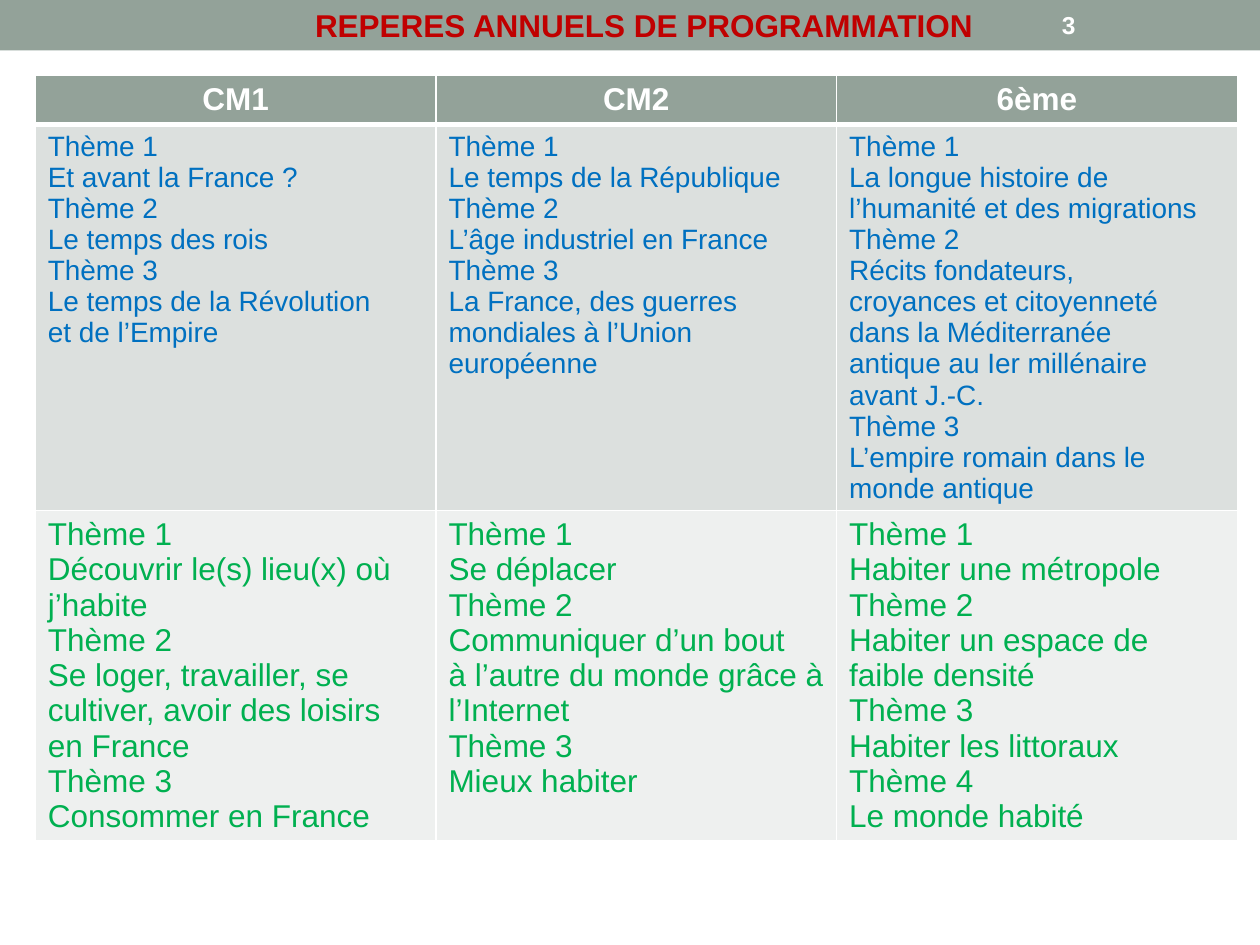
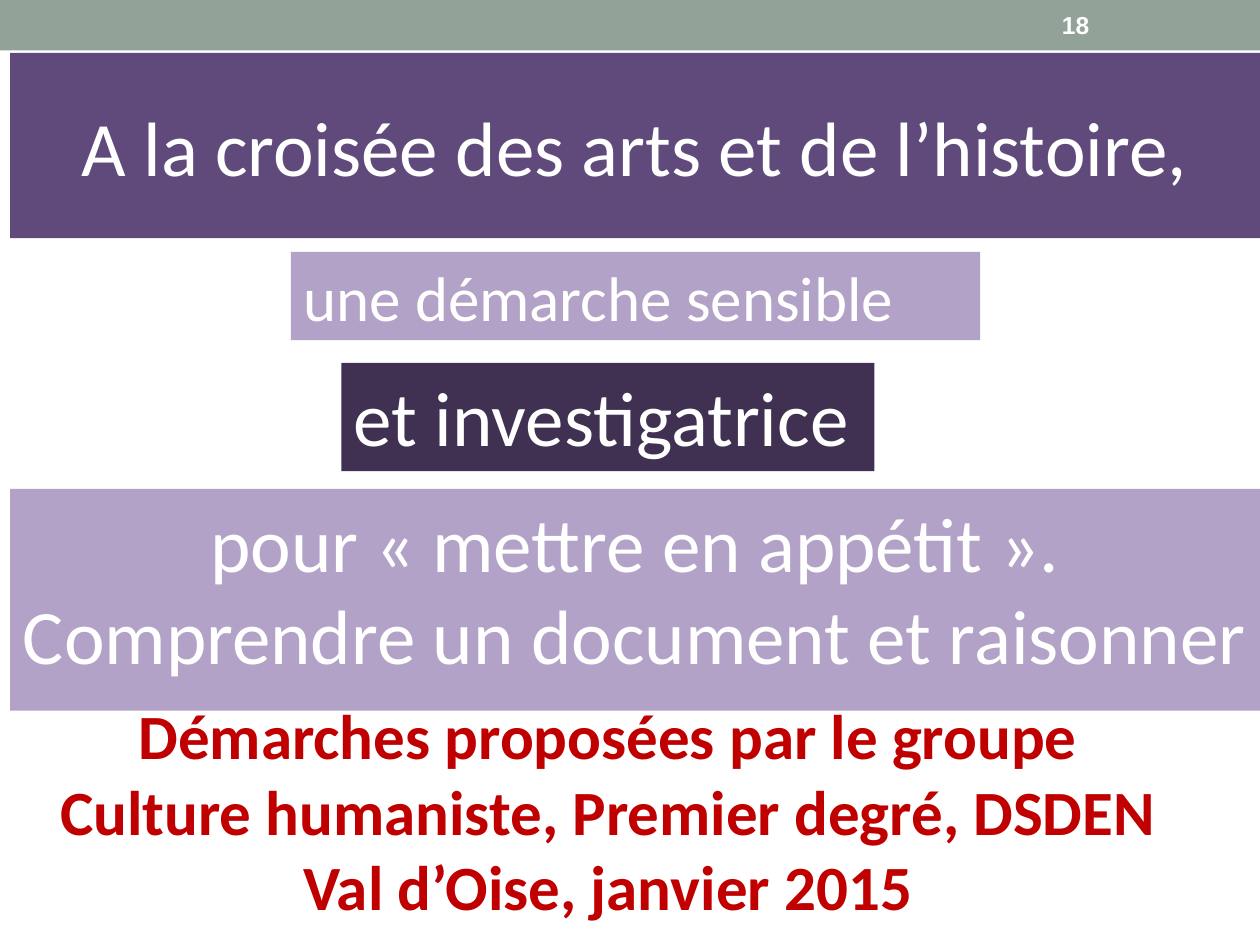
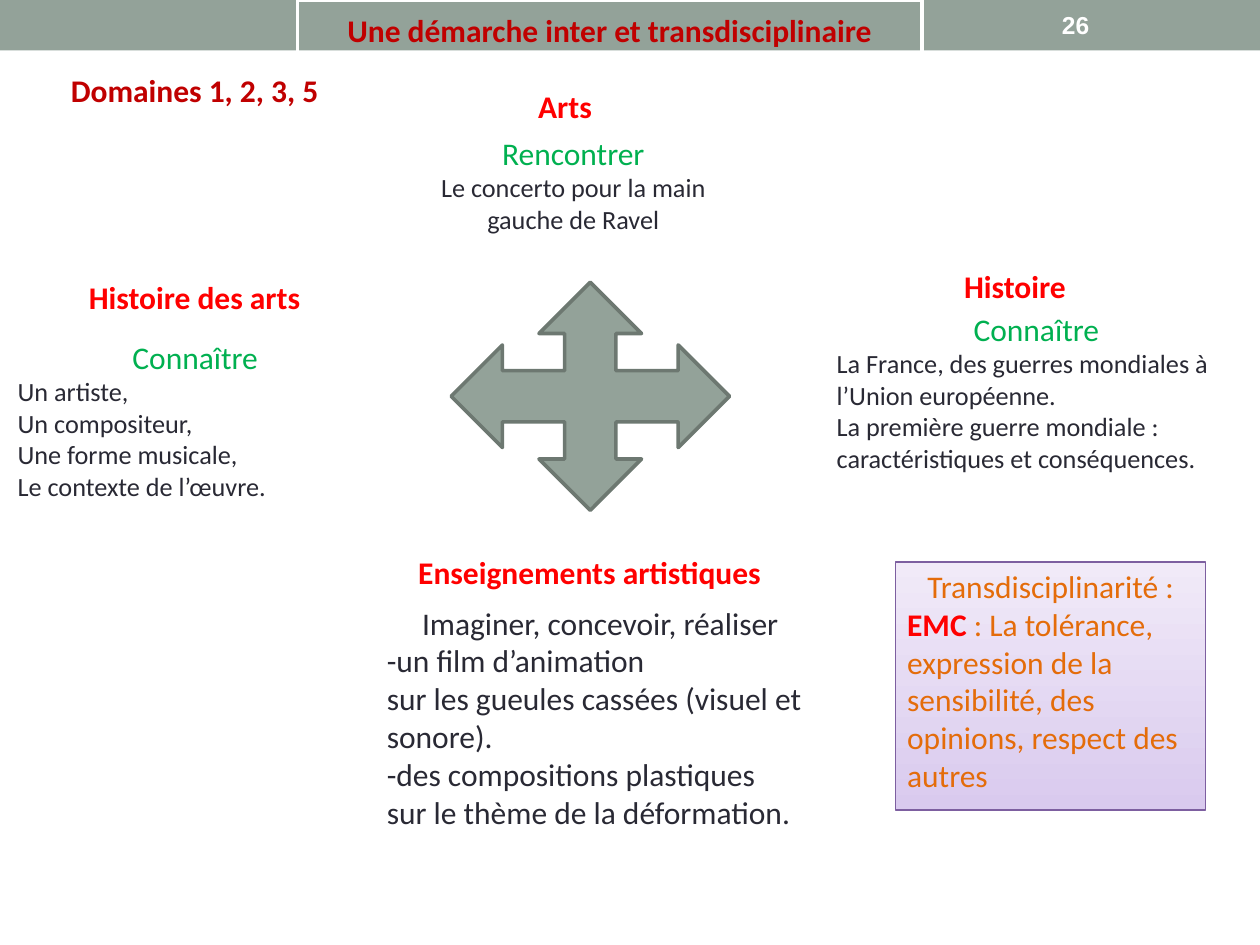
"""Build three slides on the history and arts programme for CM1, CM2 and 6ème."""
from dataclasses import dataclass
from typing import NamedTuple, Optional

from lxml.etree import SubElement
from pptx import Presentation
from pptx.dml.color import RGBColor
from pptx.enum.shapes import MSO_SHAPE
from pptx.enum.text import MSO_ANCHOR, MSO_AUTO_SIZE, PP_ALIGN
from pptx.oxml.ns import qn
from pptx.util import Inches, Pt


@dataclass(frozen=True)
class Theme:
    sage: str = "93A299"
    sage_dark: str = "6D7871"
    sage_light: str = "DCE0DE"
    sage_pale: str = "EEF0EF"
    white: str = "FFFFFF"
    ink: str = "292934"
    crimson: str = "C00000"
    red: str = "FF0000"
    green: str = "00B050"
    blue: str = "0070C0"
    orange: str = "E46C0A"
    purple: str = "604A7B"
    plum: str = "403152"
    lilac: str = "B3A2C7"
    violet: str = "7D5FA0"
    mist_low: str = "D9CAEE"
    mist_high: str = "F1EAF8"
    sans: str = "Arial"
    humanist: str = "Calibri"
    huge: float = 44
    large: float = 36
    normal: float = 18
    medium: float = 16
    small: float = 15
    number: float = 14


THEME = Theme()


class Area(NamedTuple):
    left: float
    top: float
    width: float
    height: float


class Style(NamedTuple):
    size: float
    color: str
    bold: bool = False
    font: str = THEME.humanist


class Line(NamedTuple):
    text: str
    style: Style
    centered: bool = False
    lead: str = ""
    lead_color: str = ""


class Insets(NamedTuple):
    side: float = 0.1
    top: float = 0.05
    bottom: float = 0.05


@dataclass(frozen=True)
class Panel:
    area: Area
    lines: tuple[Line, ...]
    fill: Optional[str] = None
    gradient: Optional[tuple[str, str]] = None
    outline: Optional[str] = None
    outline_width: float = 0.75
    insets: Insets = Insets()
    middle: bool = False
    wrap: bool = True


class ThemeRow(NamedTuple):
    height: float
    fill: str
    style: Style
    cells: tuple[tuple[str, ...], ...]
    centered: bool = False
    bottom_border: float = 1


TIGHT = Insets(0.09, 0.04, 0.04)
LOWERED = Insets(0.09, 0.34, 0.04)
NUMBER = Style(THEME.number, THEME.white, True, THEME.sans)
HEADER = Style(THEME.normal, THEME.white, True, THEME.sans)
HISTORY = Style(THEME.medium, THEME.blue, font=THEME.sans)
GEOGRAPHY = Style(THEME.normal, THEME.green, font=THEME.sans)
PROGRAMME = Style(THEME.normal, THEME.crimson, True, THEME.sans)
SLOGAN = Style(THEME.huge, THEME.white)
SUBSLOGAN = Style(THEME.large, THEME.white)
CREDIT = Style(THEME.large, THEME.crimson, True)
KEY = Style(THEME.normal, THEME.crimson, True)
SUBJECT = Style(THEME.normal, THEME.red, True)
VERB = Style(THEME.normal, THEME.green)
TASK = Style(THEME.normal, THEME.ink)
DETAIL = Style(THEME.small, THEME.ink)
CIVICS = Style(THEME.normal, THEME.orange)

TABLE_AREA = Area(0.28, 0.6, 9.54, 6.06)
PROGRAMME_ROWS = (
    ThemeRow(0.39, THEME.sage, HEADER, (("CM1",), ("CM2",), ("6ème",)), True, 3),
    ThemeRow(3.06, THEME.sage_light, HISTORY, (
        ("Thème 1", "Et avant la France ?", "Thème 2", "Le temps des rois", "Thème 3",
         "Le temps de la Révolution", "et de l’Empire"),
        ("Thème 1", "Le temps de la République", "Thème 2", "L’âge industriel en France",
         "Thème 3", "La France, des guerres", "mondiales à l’Union", "européenne"),
        ("Thème 1", "La longue histoire de l’humanité et des migrations", "Thème 2",
         "Récits fondateurs,", "croyances et citoyenneté", "dans la Méditerranée",
         "antique au Ier millénaire", "avant J.-C.", "Thème 3",
         "L’empire romain dans le", "monde antique"),
    )),
    ThemeRow(2.61, THEME.sage_pale, GEOGRAPHY, (
        ("Thème 1", "Découvrir le(s) lieu(x) où", "j’habite", "Thème 2",
         "Se loger, travailler, se", "cultiver, avoir des loisirs en France", "Thème 3",
         "Consommer en France"),
        ("Thème 1", "Se déplacer", "Thème 2", "Communiquer d’un bout",
         "à l’autre du monde grâce à", "l’Internet", "Thème 3", "Mieux habiter"),
        ("Thème 1", "Habiter une métropole", "Thème 2", "Habiter un espace de",
         "faible densité", "Thème 3", "Habiter les littoraux", "Thème 4",
         "Le monde habité"),
    )),
)

PROGRAMME_TITLE = Panel(Area(2.4, 0, 5.91, 0.4),
                        (Line("REPERES ANNUELS DE PROGRAMMATION", PROGRAMME),))
CROSSROADS_TITLE = Panel(Area(0.08, 0.42, 9.92, 1.47),
                         (Line("A la croisée des arts et de l’histoire,", SLOGAN, True),),
                         fill=THEME.purple, middle=True)
APPROACH_TITLE = Panel(Area(2.36, 0, 4.96, 0.47),
                       (Line("Une démarche inter et transdisciplinaire", KEY, True),),
                       outline=THEME.white, outline_width=2, insets=TIGHT, middle=True)

CROSSROADS = (
    Panel(Area(2.31, 2, 5.47, 0.7), (Line("une démarche sensible", SUBSLOGAN),),
          fill=THEME.lilac),
    Panel(Area(2.71, 2.88, 4.23, 0.86), (Line("et investigatrice", SLOGAN),),
          fill=THEME.plum),
    Panel(Area(0.08, 3.88, 9.92, 1.76),
          (Line("pour « mettre en appétit ».", SLOGAN, True),
           Line("Comprendre un document et raisonner", SLOGAN, True)), fill=THEME.lilac),
    Panel(Area(0.22, 5.48, 9.21, 2.22),
          (Line("Démarches proposées par le groupe Culture humaniste, Premier degré, "
                "DSDEN Val d’Oise, janvier 2015", CREDIT, True),)),
)


def subject(area: Area, name: str) -> Panel:
    """Return the heading of a school subject."""
    return Panel(area, (Line(name, SUBJECT, True),), outline=THEME.white, insets=LOWERED)


def activity(area: Area, verb: str, verb_style: Style, details: tuple[str, ...],
             detail_style: Style, centered: bool = False) -> Panel:
    """Return a verb followed by what pupils work on."""
    lines = tuple(Line(detail, detail_style, centered) for detail in details)
    return Panel(area, (Line(verb, verb_style, True), *lines), insets=TIGHT)


APPROACH = (
    Panel(Area(0.05, 0.52, 2.99, 0.63), (Line("Domaines 1, 2, 3, 5", KEY, True),),
          outline=THEME.white, insets=TIGHT),
    subject(Area(0.28, 1.87, 2.53, 0.63), "Histoire des arts"),
    subject(Area(2.95, 4.05, 3.46, 0.63), "Enseignements artistiques"),
    subject(Area(6.56, 1.78, 2.99, 0.63), "Histoire"),
    Panel(Area(7.11, 4.46, 2.46, 1.97),
          (Line("Transdisciplinarité :", CIVICS, True),
           Line(": La tolérance, expression de la sensibilité, des opinions, "
                "respect des autres", CIVICS, lead="EMC ", lead_color=THEME.red)),
          gradient=(THEME.mist_low, THEME.mist_high), outline=THEME.violet, insets=TIGHT),
    activity(Area(3.19, 1.02, 2.72, 0.87), "Rencontrer", VERB,
             ("Le concerto pour la main gauche de Ravel",), DETAIL, True),
    activity(Area(0.05, 2.64, 3, 1.36), "Connaître", VERB,
             ("Un artiste,", "Un compositeur,", "Une forme musicale,",
              "Le contexte de l’œuvre."), DETAIL),
    activity(Area(2.98, 4.75, 3.57, 1.9), "Imaginer, concevoir, réaliser", TASK,
             ("-un film d’animation", "sur les gueules cassées (visuel et sonore).",
              "-des compositions plastiques", "sur le thème de la déformation."), TASK),
    activity(Area(6.55, 2.42, 3.35, 1.63), "Connaître", VERB,
             ("La France, des guerres mondiales à l’Union européenne.",
              "La première guerre mondiale : caractéristiques et conséquences."), DETAIL),
    Panel(Area(4.17, 0.64, 0.63, 0.4), (Line("Arts", SUBJECT, True),), wrap=False),
)


def rgb(color: str) -> RGBColor:
    """Return a colour object for a hex code."""
    return RGBColor.from_string(color)


def inches(area: Area) -> tuple:
    """Return an area as lengths."""
    return tuple(Inches(value) for value in area)


def write(frame, lines: tuple[Line, ...]) -> None:
    """Fill a text frame with styled paragraphs."""
    for index, line in enumerate(lines):
        paragraph = frame.paragraphs[0] if index == 0 else frame.add_paragraph()
        paragraph.alignment = PP_ALIGN.CENTER if line.centered else PP_ALIGN.LEFT
        paragraph.font.name = line.style.font
        paragraph.font.size = Pt(line.style.size)
        if line.lead:
            lead = paragraph.add_run()
            lead.text = line.lead
            lead.font.bold = True
            lead.font.color.rgb = rgb(line.lead_color)
            rest = paragraph.add_run()
            rest.text = line.text
            font = rest.font
        else:
            paragraph.add_run().text = line.text
            font = paragraph.font
        font.bold = line.style.bold
        font.color.rgb = rgb(line.style.color)


def format_panel(shape, panel: Panel) -> None:
    """Apply a panel's paint, margins and text to a shape."""
    if panel.gradient:
        shape.fill.gradient()
        shape.fill.gradient_angle = 90
        for stop, color in zip(shape.fill.gradient_stops, panel.gradient):
            stop.color.rgb = rgb(color)
    elif panel.fill:
        shape.fill.solid()
        shape.fill.fore_color.rgb = rgb(panel.fill)
    else:
        shape.fill.background()
    if panel.outline:
        shape.line.color.rgb = rgb(panel.outline)
        shape.line.width = Pt(panel.outline_width)
    else:
        shape.line.fill.background()
    frame = shape.text_frame
    frame.auto_size = MSO_AUTO_SIZE.NONE
    frame.word_wrap = panel.wrap
    frame.vertical_anchor = MSO_ANCHOR.MIDDLE if panel.middle else MSO_ANCHOR.TOP
    frame.margin_left = frame.margin_right = Inches(panel.insets.side)
    frame.margin_top = Inches(panel.insets.top)
    frame.margin_bottom = Inches(panel.insets.bottom)
    write(frame, panel.lines)


def add_panel(slide, panel: Panel) -> None:
    """Draw a panel as a box, or as a text box when it has no paint."""
    if panel.fill or panel.gradient or panel.outline:
        shape = slide.shapes.add_shape(MSO_SHAPE.RECTANGLE, *inches(panel.area))
        shape.shadow.inherit = False
    else:
        shape = slide.shapes.add_textbox(*inches(panel.area))
    format_panel(shape, panel)


def add_titled_slide(deck, title: Panel, number: int):
    """Add a slide with its title and page number."""
    slide = deck.slides.add_slide(deck.slide_layouts[5])
    heading = slide.shapes.title
    heading.left, heading.top, heading.width, heading.height = inches(title.area)
    format_panel(heading, title)
    add_panel(slide, Panel(Area(8.33, 0.02, 1.17, 0.36), (Line(str(number), NUMBER),),
                           middle=True))
    return slide


def add_master_band(deck, slide) -> None:
    """Place the top band on the master behind every slide."""
    band = slide.shapes.add_shape(MSO_SHAPE.RECTANGLE, *inches(Area(0, 0, 10, 0.4)))
    band.shadow.inherit = False
    band.fill.solid()
    band.fill.fore_color.rgb = rgb(THEME.sage)
    band.line.fill.background()
    deck.slide_master.shapes.element.insert(2, band.element)


def set_borders(cell, bottom: float) -> None:
    """Give a cell white borders."""
    properties = cell._tc.get_or_add_tcPr()
    for side, width in (("L", 1), ("R", 1), ("T", 1), ("B", bottom)):
        border = SubElement(properties, qn(f"a:ln{side}"), w=str(Pt(width)))
        paint = SubElement(border, qn("a:solidFill"))
        SubElement(paint, qn("a:srgbClr"), val=THEME.white)


def add_programme(slide) -> None:
    """Draw the table of themes by school year."""
    rows, years = len(PROGRAMME_ROWS), len(PROGRAMME_ROWS[0].cells)
    table = slide.shapes.add_table(rows, years, *inches(TABLE_AREA)).table
    for column in table.columns:
        column.width = Inches(TABLE_AREA.width / years)
    for row_index, row in enumerate(PROGRAMME_ROWS):
        table.rows[row_index].height = Inches(row.height)
        for year, texts in enumerate(row.cells):
            cell = table.cell(row_index, year)
            top_border = PROGRAMME_ROWS[row_index - 1].bottom_border if row_index else 1
            set_borders(cell, row.bottom_border)
            cell._tc.tcPr.find(qn("a:lnT")).set("w", str(Pt(top_border)))
            cell.fill.solid()
            cell.fill.fore_color.rgb = rgb(row.fill)
            write(cell.text_frame,
                  tuple(Line(text, row.style, row.centered) for text in texts))


def add_crossing_arrows(slide) -> None:
    """Draw the four-way arrow that links the subjects."""
    arrows = slide.shapes.add_shape(MSO_SHAPE.QUAD_ARROW,
                                    *inches(Area(3.58, 2.24, 2.21, 1.81)))
    arrows.shadow.inherit = False
    arrows.fill.solid()
    arrows.fill.fore_color.rgb = rgb(THEME.sage)
    arrows.line.color.rgb = rgb(THEME.sage_dark)
    arrows.line.width = Pt(2.08)


def main() -> None:
    """Build and save the deck."""
    deck = Presentation()
    deck.slide_width, deck.slide_height = Inches(10), Inches(7.5)

    programme = add_titled_slide(deck, PROGRAMME_TITLE, 3)
    add_master_band(deck, programme)
    add_programme(programme)

    crossroads = add_titled_slide(deck, CROSSROADS_TITLE, 18)
    for panel in CROSSROADS:
        add_panel(crossroads, panel)

    approach = add_titled_slide(deck, APPROACH_TITLE, 26)
    for panel in APPROACH:
        add_panel(approach, panel)
    add_crossing_arrows(approach)

    deck.save("out.pptx")


if __name__ == "__main__":
    main()
